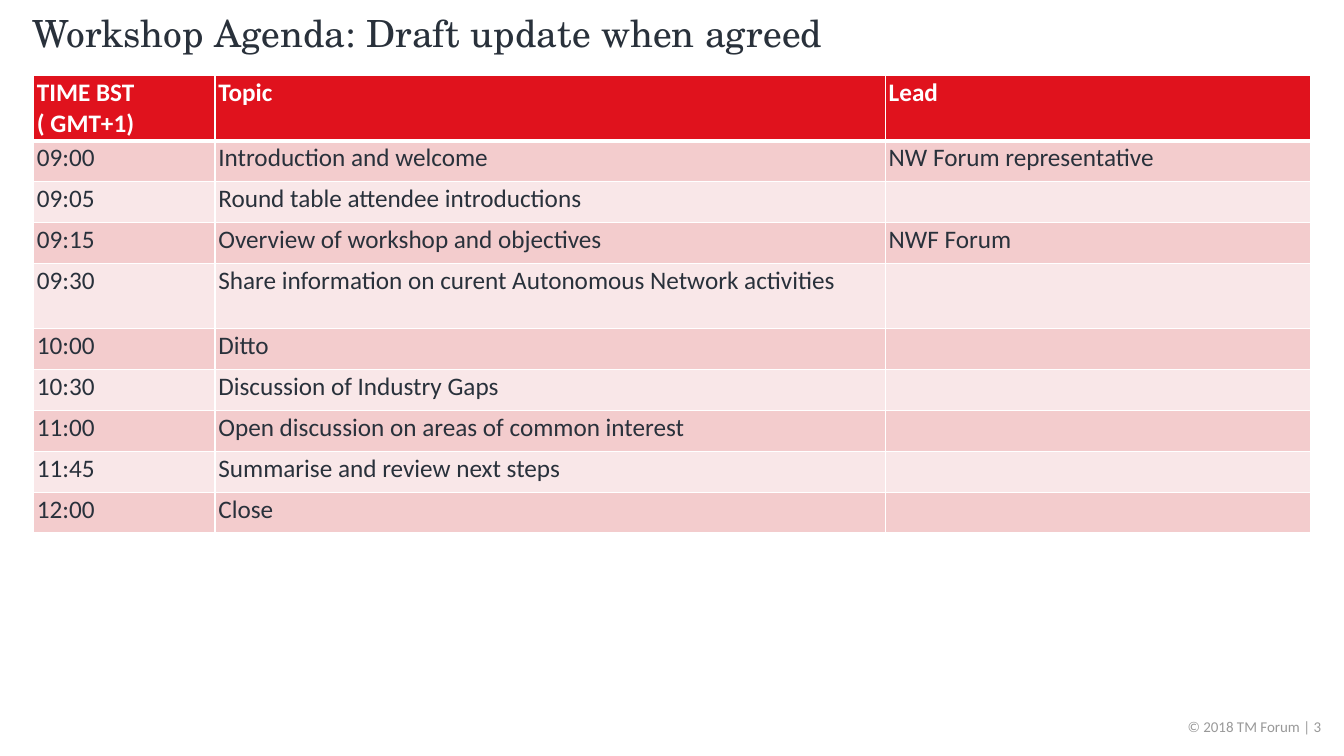
from lxml.etree import SubElement
from pptx import Presentation
from pptx.dml.color import RGBColor
from pptx.enum.text import MSO_ANCHOR, MSO_AUTO_SIZE, PP_ALIGN
from pptx.oxml.ns import qn
from pptx.util import Pt

WHITE = RGBColor(0xFF, 0xFF, 0xFF)
INK = RGBColor(0x29, 0x31, 0x3B)
GREY = RGBColor(0x99, 0x99, 0x99)
RED = RGBColor(0xE0, 0x12, 0x1D)
BANDS = [RGBColor(0xF9, 0xE7, 0xE8), RGBColor(0xF3, 0xCC, 0xCD)]

BODY_FONT = "Calibri"
TITLE_FONT = "TeX Gyre Schola"

COLUMN_WIDTHS = [129.6, 478.8, 303.8]
ROW_HEIGHT, TALL_ROW_HEIGHT = 29.2, 46.6
TALL_ROWS = {0, 4}
AGENDA = [
    ("TIME BST ( GMT+1)", "Topic", "Lead"),
    ("09:00", "Introduction and welcome", "NW Forum representative"),
    ("09:05", "Round table attendee introductions", ""),
    ("09:15", "Overview of workshop and objectives", "NWF Forum"),
    ("09:30", "Share information on curent Autonomous Network activities", ""),
    ("10:00", "Ditto", ""),
    ("10:30", "Discussion of Industry Gaps", ""),
    ("11:00", "Open discussion on areas of common interest", ""),
    ("11:45", "Summarise and review next steps", ""),
    ("12:00", "Close", ""),
]


def write(frame, text, font_name, size, color, bold=False, align=PP_ALIGN.LEFT):
    paragraph = frame.paragraphs[0]
    paragraph.text = text
    paragraph.alignment = align
    for font in [paragraph.font] + [run.font for run in paragraph.runs]:
        font.name = font_name
        font.size = Pt(size)
        font.bold = bold
        font.color.rgb = color


def set_margins(holder, side, top, bottom):
    holder.margin_left = holder.margin_right = Pt(side)
    holder.margin_top, holder.margin_bottom = Pt(top), Pt(bottom)


def add_borders(cell, top, bottom):
    properties = cell._tc.get_or_add_tcPr()
    for side, width in (("L", 1), ("R", 1), ("T", top), ("B", bottom)):
        line = SubElement(properties, qn(f"a:ln{side}"), w=str(Pt(width)))
        fill = SubElement(line, qn("a:solidFill"))
        SubElement(fill, qn("a:srgbClr"), val=str(WHITE))


def add_title(slide, text):
    title = slide.shapes.title
    title.left, title.top, title.width, title.height = Pt(16), Pt(10.8), Pt(808), Pt(24.5)
    frame = title.text_frame
    frame.auto_size = MSO_AUTO_SIZE.NONE
    frame.word_wrap = True
    frame.vertical_anchor = MSO_ANCHOR.MIDDLE
    write(frame, text, TITLE_FONT, 26.7, INK)


def add_agenda(slide):
    heights = [TALL_ROW_HEIGHT if row in TALL_ROWS else ROW_HEIGHT
               for row in range(len(AGENDA))]
    agenda = slide.shapes.add_table(
        len(AGENDA), len(COLUMN_WIDTHS), Pt(24), Pt(54),
        Pt(sum(COLUMN_WIDTHS)), Pt(sum(heights))).table
    for column, width in zip(agenda.columns, COLUMN_WIDTHS):
        column.width = Pt(width)

    for row, entries in enumerate(AGENDA):
        agenda.rows[row].height = Pt(heights[row])
        header = row == 0
        for column, entry in enumerate(entries):
            cell = agenda.cell(row, column)
            set_margins(cell, 2.4, 1.4, 1.4)
            # The heading is parted from the body by a thicker rule
            add_borders(cell, top=3 if row == 1 else 1, bottom=3 if header else 1)
            cell.fill.solid()
            cell.fill.fore_color.rgb = RED if header else BANDS[row % 2]
            write(cell.text_frame, entry, BODY_FONT, 18,
                  WHITE if header else INK, bold=header)


def add_footer(slide, text):
    footer = slide.shapes.add_textbox(Pt(735.8), Pt(509.8), Pt(208), Pt(14.4))
    frame = footer.text_frame
    frame.word_wrap = True
    set_margins(frame, 0, 2.8, 0)
    write(frame, text, BODY_FONT, 10.7, GREY, align=PP_ALIGN.RIGHT)


def main():
    deck = Presentation()
    deck.slide_width, deck.slide_height = Pt(960), Pt(540)
    # Title-only layout
    slide = deck.slides.add_slide(deck.slide_layouts[5])

    add_footer(slide, "© 2018 TM Forum | 3")
    add_agenda(slide)
    add_title(slide, "Workshop Agenda: Draft update when agreed")
    deck.save("out.pptx")


if __name__ == "__main__":
    main()
